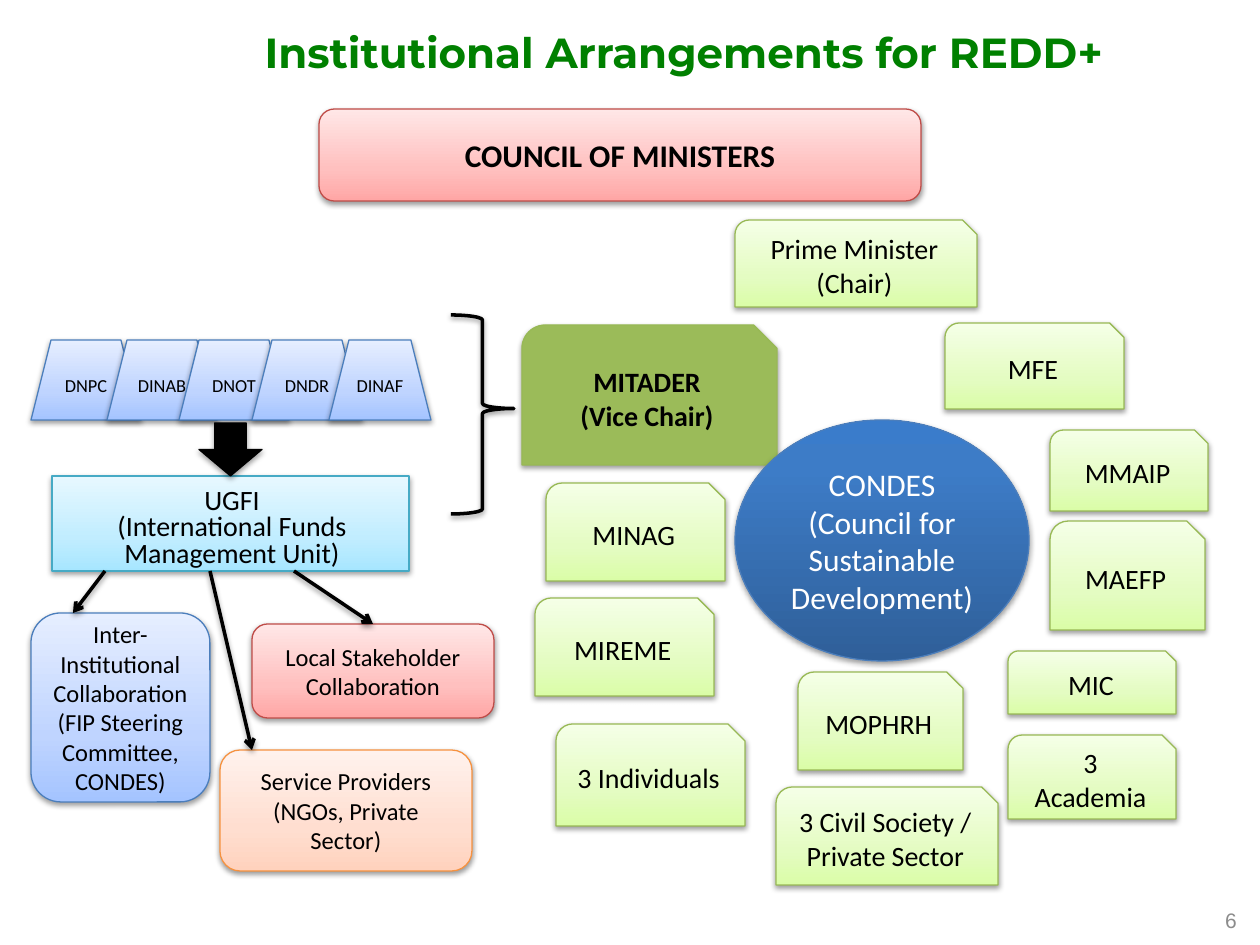
import copy
import dataclasses

import lxml.etree
import pptx
import pptx.dml.color
import pptx.enum.shapes
import pptx.enum.text
import pptx.oxml.ns
import pptx.util

EMU_PER_PX = 914400 / 126
SHAPE = pptx.enum.shapes.MSO_SHAPE
ALIGN = pptx.enum.text.PP_ALIGN
ANCHOR = pptx.enum.text.MSO_ANCHOR
qn = pptx.oxml.ns.qn


@dataclasses.dataclass(frozen=True)
class Paint:
    stops: tuple
    outline: str


@dataclasses.dataclass(frozen=True)
class Theme:
    blue = Paint(((0, "A4C4FF"), (0.35, "BFD4FF"), (1, "E6EEFF")), "4B7EBC")
    green = Paint(((0, "DAFDA7"), (0.35, "E4FCC2"), (1, "F5FFE7")), "98B955")
    red = Paint(((0, "FFA6A5"), (0.35, "FFC0BF"), (1, "FFE7E7")), "BF4C48")
    cyan = Paint(((0, "A7E6FF"), (0.35, "C1EDFF"), (1, "E7F8FF")), "46AAC5")
    orange = Paint(((0, "FFD2BD"), (0.35, "FFDED0"), (1, "FFF2ED")), "F69240")
    deep_blue = Paint(((0, "2F5F99"), (0.8, "3D7CC7"), (1, "3A7CCB")), "4B7EBC")
    olive = Paint(((0, "9BBB59"),), "98B955")
    solid_black = Paint(((0, "000000"),), "000000")
    black = "000000"
    white = "FFFFFF"
    heading = "008000"
    muted = "8C8C8C"
    body_font = "Calibri"
    heading_font = "Montserrat"
    number_font = "Arial"
    heading_size = 24
    large = 18
    medium = 16
    small = 14
    note = 12
    tiny = 10.5
    thin = 0.75
    thick = 2


def px(length):
    return pptx.util.Emu(round(length * EMU_PER_PX))


def rgb(code):
    return pptx.dml.color.RGBColor.from_string(code)


def write_text(frame, text, size=Theme.medium, color=Theme.black, font=Theme.body_font,
               bold=False, align=ALIGN.CENTER, anchor=ANCHOR.MIDDLE,
               line_spacing=None, space_after=None):
    frame.word_wrap = True
    frame.vertical_anchor = anchor
    for index, wording in enumerate(text.split("\n")):
        paragraph = frame.add_paragraph() if index else frame.paragraphs[0]
        paragraph.alignment = align
        if line_spacing is not None:
            paragraph.line_spacing = line_spacing
        if space_after is not None:
            paragraph.space_after = pptx.util.Pt(space_after)
        run = paragraph.add_run()
        run.text = wording
        run.font.size = pptx.util.Pt(size)
        run.font.name = font
        run.font.bold = bold
        run.font.color.rgb = rgb(color)


class Chart:
    def __init__(self, slide, theme):
        self.slide = slide
        self.theme = theme

    def cast_shadow(self, item):
        properties = item._element.spPr
        for old in properties.findall(qn("a:effectLst")):
            properties.remove(old)
        effects = lxml.etree.SubElement(properties, qn("a:effectLst"))
        shadow = lxml.etree.SubElement(effects, qn("a:outerShdw"), blurRad="40000",
                                       dist="20000", dir="5400000", rotWithShape="0")
        tone = lxml.etree.SubElement(shadow, qn("a:srgbClr"), val=self.theme.black)
        lxml.etree.SubElement(tone, qn("a:alpha"), val="38000")

    def stroke(self, item, color, width):
        item.line.color.rgb = rgb(color)
        item.line.width = pptx.util.Pt(width)

    def apply_fill(self, fill, shape, stops):
        if len(stops) == 1:
            fill.solid()
            fill.fore_color.rgb = rgb(stops[0][1])
            return
        fill.gradient()
        fill.gradient_angle = 90
        stop_list = shape._element.spPr.find(qn("a:gradFill")).find(qn("a:gsLst"))
        stop_list.insert(1, copy.deepcopy(stop_list[0]))
        for stop, (position, color) in zip(fill.gradient_stops, stops):
            stop.position = position
            stop.color.rgb = rgb(color)

    def box(self, kind, bounds, paint, text="", corner=None, **text_format):
        shape = self.slide.shapes.add_shape(kind, *map(px, bounds))
        shape.shadow.inherit = False
        if corner is not None:
            shape.adjustments[0] = corner
        self.apply_fill(shape.fill, shape, paint.stops)
        self.stroke(shape, paint.outline, self.theme.thin)
        self.cast_shadow(shape)
        if text:
            write_text(shape.text_frame, text, **text_format)

    def brace(self, bounds):
        shape = self.slide.shapes.add_shape(SHAPE.RIGHT_BRACE, *map(px, bounds))
        shape.shadow.inherit = False
        shape.adjustments[0], shape.adjustments[1] = 0.08, 0.47
        shape.fill.background()
        self.stroke(shape, self.theme.black, self.theme.thick)
        self.cast_shadow(shape)

    def arrow(self, start, end):
        link = self.slide.shapes.add_connector(
            pptx.enum.shapes.MSO_CONNECTOR.STRAIGHT, *map(px, start + end))
        self.stroke(link, self.theme.black, self.theme.thick)
        lxml.etree.SubElement(link.line._get_or_add_ln(), qn("a:tailEnd"), type="arrow")
        self.cast_shadow(link)

    def title(self, bounds, text, **text_format):
        heading = self.slide.shapes.title
        heading.left, heading.top, heading.width, heading.height = map(px, bounds)
        write_text(heading.text_frame, text, **text_format)

    def label(self, bounds, text, inset=None, **text_format):
        frame = self.slide.shapes.add_textbox(*map(px, bounds)).text_frame
        if inset is not None:
            frame.margin_top = frame.margin_bottom = px(inset)
        write_text(frame, text, **text_format)


def main():
    deck = pptx.Presentation()
    deck.slide_width, deck.slide_height = px(1260), px(945)
    theme = Theme()
    chart = Chart(deck.slides.add_slide(deck.slide_layouts[5]), theme)

    chart.title((252, 20, 1155, 63), "Institutional Arrangements for REDD+",
                size=theme.heading_size, color=theme.heading, font=theme.heading_font,
                bold=True, align=ALIGN.JUSTIFY, anchor=ANCHOR.TOP)
    chart.box(SHAPE.ROUNDED_RECTANGLE, (319, 109, 602, 92), theme.red,
              "COUNCIL OF MINISTERS", size=theme.large, bold=True)

    chart.box(SHAPE.SNIP_ROUND_RECTANGLE, (522, 325, 255, 140), theme.olive,
              "MITADER\n(Vice Chair)", bold=True)
    council_members = (
        ("Prime Minister\n(Chair)", (735, 220, 242, 87)),
        ("MFE", (945, 323, 179, 86)),
        ("MOPHRH", (798, 672, 165, 98)),
        ("MIC", (1008, 651, 168, 63)),
        ("MIREME", (535, 598, 179, 98)),
        ("MINAG", (546, 483, 179, 98)),
        ("3 Civil Society / Private Sector", (776, 787, 222, 98)),
        ("3 Academia", (1008, 735, 168, 84)),
        ("MMAIP", (1050, 430, 158, 81)),
        ("MAEFP", (1050, 521, 155, 109)),
        ("3 Individuals", (556, 724, 189, 102)),
    )
    for member, bounds in council_members:
        chart.box(SHAPE.SNIP_ROUND_RECTANGLE, bounds, theme.green, member)
    chart.box(SHAPE.OVAL, (735, 420, 294, 241), theme.deep_blue,
              "CONDES (Council for Sustainable Development)",
              size=theme.large, color=theme.white)

    directorates = (("DNPC", 31, 110), ("DINAB", 107, 110), ("DNOT", 179, 110),
                    ("DNDR", 252, 110), ("DINAF", 329, 102))
    for directorate, left, width in directorates:
        chart.box(SHAPE.TRAPEZOID, (left, 340, width, 80), theme.blue,
                  directorate, size=theme.tiny)
    chart.brace((451, 315, 63, 199))

    chart.box(SHAPE.ROUNDED_RECTANGLE, (52, 476, 357, 95), theme.cyan, corner=0)
    chart.label((63, 493, 338, 78),
                "UGFI\n(International Funds\nManagement Unit)",
                inset=13, line_spacing=0.5, space_after=5.5)
    chart.box(SHAPE.DOWN_ARROW, (199, 423, 63, 53), theme.solid_black)

    partners = (
        ("Local Stakeholder Collaboration", (252, 624, 242, 94), theme.red),
        ("Service Providers (NGOs, Private Sector)", (220, 750, 252, 121), theme.orange),
        ("Inter-Institutional Collaboration (FIP Steering Committee, CONDES)",
         (31, 613, 179, 189), theme.blue),
    )
    for partner, bounds, paint in partners:
        chart.box(SHAPE.ROUNDED_RECTANGLE, bounds, paint, partner, size=theme.small)
    for start, end in (((105, 571), (73, 613)), ((294, 571), (373, 624)),
                       ((210, 571), (252, 750))):
        chart.arrow(start, end)

    chart.label((955, 895, 294, 50), "6", size=theme.note, color=theme.muted,
                font=theme.number_font, align=ALIGN.RIGHT)
    deck.save("out.pptx")


if __name__ == "__main__":
    main()
